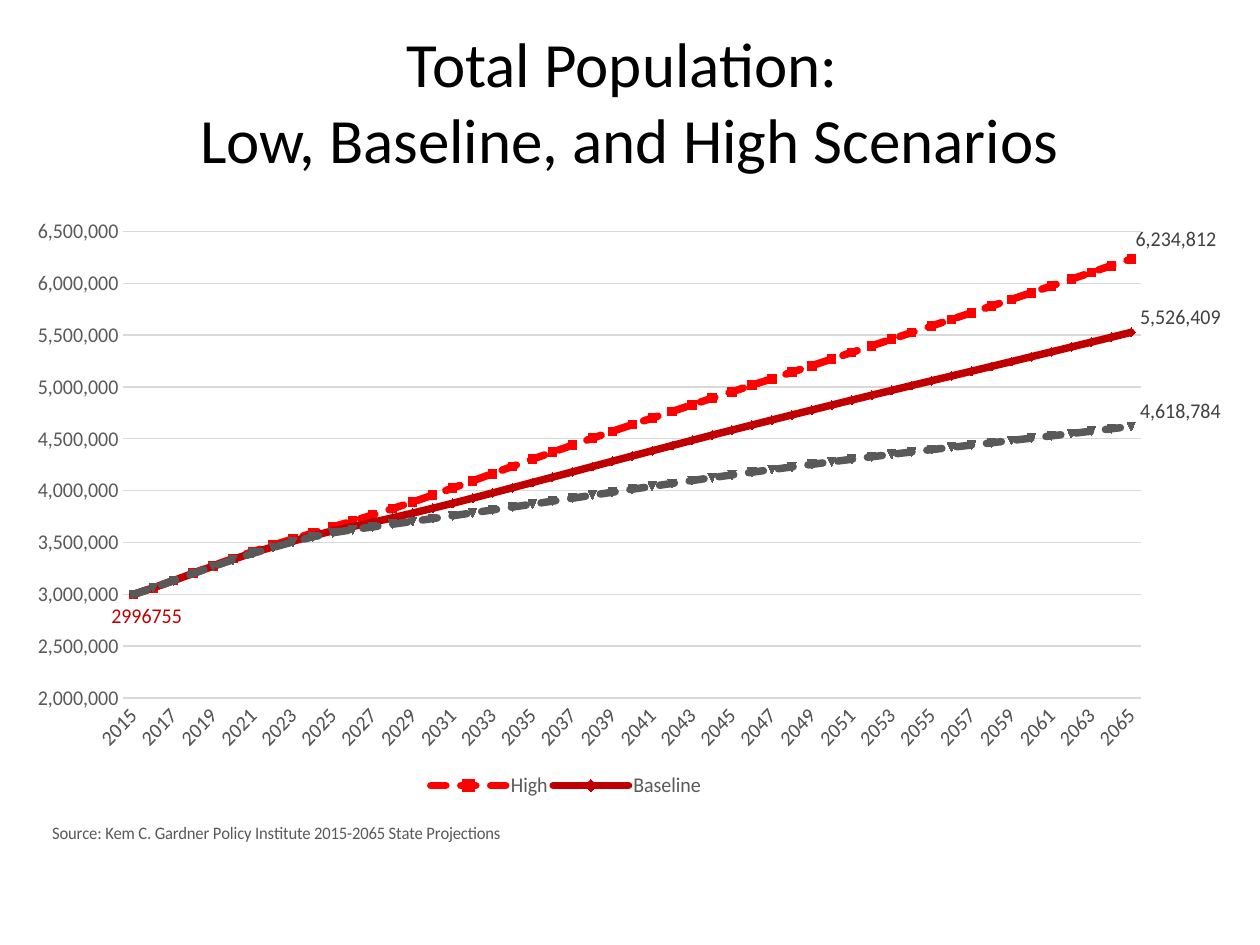
from dataclasses import dataclass
from typing import Optional

from lxml import etree
from pptx import Presentation
from pptx.chart.data import CategoryChartData
from pptx.dml.color import RGBColor
from pptx.enum.chart import XL_CHART_TYPE, XL_LABEL_POSITION, XL_LEGEND_POSITION, XL_TICK_MARK
from pptx.enum.dml import MSO_LINE
from pptx.enum.text import MSO_ANCHOR, MSO_AUTO_SIZE, PP_ALIGN
from pptx.oxml.ns import qn
from pptx.util import Inches, Pt

LINE = XL_CHART_TYPE.LINE
BELOW, RIGHT = XL_LABEL_POSITION.BELOW, XL_LABEL_POSITION.RIGHT
BOTTOM = XL_LEGEND_POSITION.BOTTOM
NO_TICK = XL_TICK_MARK.NONE
SYS_DASH = MSO_LINE.SQUARE_DOT
CENTER, LEFT = PP_ALIGN.CENTER, PP_ALIGN.LEFT
MIDDLE = MSO_ANCHOR.MIDDLE
NO_FIT = MSO_AUTO_SIZE.NONE

FONT = "Calibri"
GRAY, GRID = "595959", "D9D9D9"
NUM_FMT = "#,##0"
YEARS = range(2015, 2066)


@dataclass
class Scenario:
    name: str
    color: str
    dash: Optional[MSO_LINE]
    label_shift: tuple[float, float]
    values: list[int]


SCENARIOS = [
    Scenario("High", "FF0000", SYS_DASH, (-0.004, -0.03), [
        2996755, 3061691, 3131526, 3203565, 3275145, 3344488, 3410704, 3473569, 3533009,
        3589373, 3650017, 3706665, 3764759, 3825854, 3889489, 3955597, 4023713, 4093167,
        4163307, 4233241, 4302427, 4370361, 4437277, 4504483, 4570843, 4636016, 4699906,
        4763291, 4827048, 4890967, 4953582, 5016266, 5079038, 5142012, 5205206, 5268680,
        5332456, 5396354, 5460215, 5523949, 5587676, 5651536, 5715555, 5779806, 5844312,
        5909011, 5973947, 6039050, 6104258, 6169521, 6234812]),
    Scenario("Baseline", "C00000", None, (0, -0.023), [
        2996755, 3061160, 3130136, 3200621, 3269956, 3336353, 3398907, 3457380, 3511959,
        3563070, 3611237, 3652819, 3694313, 3737633, 3782551, 3829201, 3877306, 3926576,
        3976749, 4027339, 4078178, 4129098, 4179646, 4231151, 4282334, 4333400, 4383865,
        4434110, 4484474, 4534683, 4583703, 4632521, 4681026, 4729285, 4777291, 4825101,
        4872734, 4920050, 4966945, 5013384, 5059541, 5105602, 5151658, 5197846, 5244266,
        5291027, 5337990, 5384874, 5431753, 5478910, 5526409]),
    Scenario("Low", GRAY, SYS_DASH, (0, -0.023), [
        2996755, 3061090, 3129253, 3198860, 3267212, 3332510, 3393843, 3450971, 3504075,
        3553577, 3592780, 3622090, 3649009, 3675840, 3702639, 3729787, 3757236, 3784972,
        3812975, 3841030, 3869232, 3897667, 3925966, 3955206, 3984146, 4012942, 4041073,
        4069032, 4097041, 4124667, 4151061, 4177049, 4202642, 4227926, 4252885, 4277564,
        4301953, 4325916, 4349370, 4372282, 4394804, 4417080, 4439171, 4461218, 4483304,
        4505450, 4527750, 4550216, 4572858, 4595703, 4618784]),
]


def rgb(color: str) -> RGBColor:
    return RGBColor.from_string(color)


def style_font(font, size: float, color: str) -> None:
    font.name = FONT
    font.size = Pt(size)
    font.bold = False
    font.color.rgb = rgb(color)


def style_line(line, color: str, width: float) -> None:
    line.color.rgb = rgb(color)
    line.width = Pt(width)


def chart_tag(name: str, **attrs: str):
    return etree.Element(qn(f"c:{name}"), attrs)


def set_layout(parent, index: int, inner: bool = False, edge: bool = True, **place: float) -> None:
    old = parent.find(qn("c:layout"))
    if old is not None:
        parent.remove(old)
    layout = chart_tag("layout")
    manual = etree.SubElement(layout, qn("c:manualLayout"))
    if inner:
        manual.append(chart_tag("layoutTarget", val="inner"))
    if edge:
        manual.append(chart_tag("xMode", val="edge"))
        manual.append(chart_tag("yMode", val="edge"))
    for key, value in place.items():
        manual.append(chart_tag(key, val=str(value)))
    parent.insert(index, layout)


def add_label(series, idx: int, color: str, position, shift: tuple[float, float], text: str = "") -> None:
    label = series.points[idx].data_label
    if text:
        tf = label.text_frame
        tf.text = text
        style_font(tf.paragraphs[0].runs[0].font, 12, color)
    else:
        style_font(label.font, 12, color)
    label.position = position
    dLbl = series.data_labels._element.find(f"{qn('c:dLbl')}[last()]")
    set_layout(dLbl, 1, edge=False, x=shift[0], y=shift[1])
    if not text:
        dLbl.insert(2, chart_tag("numFmt", formatCode=NUM_FMT, sourceLinked="0"))


def style_series(series, scenario: Scenario) -> None:
    series.smooth = False
    series.marker.style = None
    line = series.format.line
    style_line(line, scenario.color, 4.5)
    if scenario.dash is not None:
        line.dash_style = scenario.dash
    series._element.find(f"{qn('c:spPr')}/{qn('a:ln')}").set("cap", "rnd")
    series.data_labels.show_value = False
    if scenario.name == "Low":
        add_label(series, 0, "C00000", BELOW, (0.012, 0), str(scenario.values[0]))
    add_label(series, len(YEARS) - 1, "404040", RIGHT, scenario.label_shift)


def style_axes(chart) -> None:
    cat, val = chart.category_axis, chart.value_axis
    for axis in (cat, val):
        axis.major_tick_mark = axis.minor_tick_mark = NO_TICK
        style_font(axis.tick_labels.font, 12, GRAY)
    style_line(cat.format.line, GRID, 0.75)
    cat._element.find(f"{qn('c:txPr')}/{qn('a:bodyPr')}").set("rot", "-2700000")
    cat._element.find(qn("c:lblOffset")).addnext(chart_tag("tickLblSkip", val="2"))
    tf = cat.axis_title.text_frame
    tf.text = "Source: Kem C. Gardner Policy Institute 2015-2065 State Projections"
    p = tf.paragraphs[0]
    p.alignment = LEFT
    style_font(p.runs[0].font, 10, GRAY)
    set_layout(cat.axis_title._element, 1, x=0.01, y=0.95)

    val.minimum_scale, val.maximum_scale, val.major_unit = 2000000, 6500000, 500000
    val.tick_labels.number_format = NUM_FMT
    val.tick_labels.number_format_is_linked = False
    val.format.line.fill.background()
    val.has_major_gridlines = True
    style_line(val.major_gridlines.format.line, GRID, 0.75)


def style_legend(chart) -> None:
    chart.has_legend = True
    legend = chart.legend
    legend.position = BOTTOM
    legend.include_in_layout = False
    style_font(legend.font, 12, GRAY)
    entry = chart_tag("legendEntry")
    entry.append(chart_tag("idx", val="2"))
    entry.append(chart_tag("delete", val="1"))
    legend._element.insert(1, entry)
    set_layout(legend._element, 2, x=0.345, y=0.875, w=0.25, h=0.05)


def add_population_chart(s) -> None:
    data = CategoryChartData(number_format=NUM_FMT)
    data.categories = [str(year) for year in YEARS]
    for scenario in SCENARIOS:
        data.add_series(scenario.name, scenario.values)
    chart = s.shapes.add_chart(LINE, Inches(0.3), Inches(1.6), Inches(9.39), Inches(5.15), data).chart
    chart.has_title = False
    style_font(chart.font, 12, "000000")
    chart.plots[0].vary_by_categories = False
    for series, scenario in zip(chart.plots[0].series, SCENARIOS):
        style_series(series, scenario)
    style_axes(chart)
    style_legend(chart)
    plot_area = chart._chartSpace.find(f".//{qn('c:plotArea')}")
    set_layout(plot_area, 0, inner=True, x=0.076, y=0.046, w=0.906, h=0.719)


def add_title(s) -> None:
    sp = s.shapes.title
    sp.left, sp.top, sp.width, sp.height = Inches(0.3), Inches(0.14), Inches(9.39), Inches(1.31)
    tf = sp.text_frame
    tf.text = "Total Population: \nLow, Baseline, and High Scenarios"
    tf.auto_size = NO_FIT
    tf.vertical_anchor = MIDDLE
    for p in tf.paragraphs:
        p.alignment = CENTER
        style_font(p.runs[0].font, 36, "000000")


def main() -> None:
    prs = Presentation()
    prs.slide_width, prs.slide_height = Inches(10), Inches(7.5)
    s = prs.slides.add_slide(prs.slide_layouts[5])
    add_title(s)
    add_population_chart(s)
    prs.save("out.pptx")


if __name__ == "__main__":
    main()
